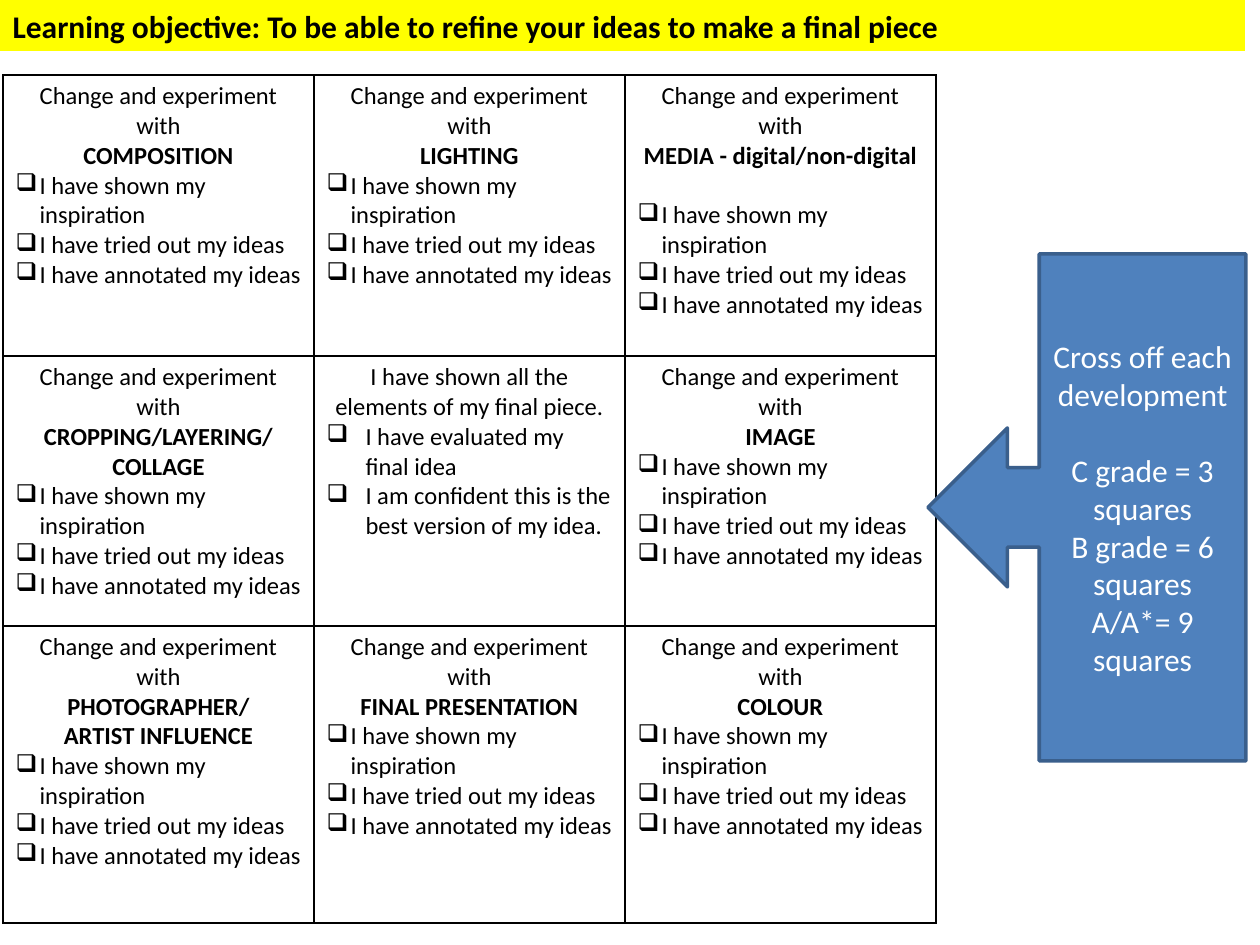
from pptx import Presentation, util as u
from pptx.dml.color import RGBColor
from pptx.enum import shapes, text
from pptx.oxml.ns import qn
from lxml import etree

PX = 914400 // 126
THEME = {
    "font": "Calibri", "ink": "000000", "light": "FFFFFF", "bar": "FFFF00",
    "call": "4F81BD", "edge": "3A5F8C", "cell": 14, "head": 18,
}
TITLE = "Learning objective: To be able to refine your ideas to make a final piece"
LEAD = "Change and experiment with"
CHECKS = ["I have shown my inspiration", "I have tried out my ideas",
          "I have annotated my ideas"]
FINAL = "I have shown all the elements of my final piece."
PROOFS = ["I have evaluated my final idea",
          "I am confident this is the best version of my idea."]
# Topic lines of each square; None marks the final-piece square.
TOPICS = [
    [["COMPOSITION"], ["LIGHTING"], ["MEDIA - digital/non-digital"]],
    [["CROPPING/LAYERING/ COLLAGE"], None, ["IMAGE"]],
    [["PHOTOGRAPHER/", "ARTIST INFLUENCE"], ["FINAL PRESENTATION"], ["COLOUR"]],
]
GAPS = {(0, 2): 17}  # points between topic and checklist
GRADES = ["Cross off each development", "C grade = 3 squares",
          "B grade = 6 squares", "A/A*= 9 squares"]
LEFT, TOP, COL = 3, 75, 311
ROWS = [281, 270, 297]


def px(n):
    return u.Emu(n * PX)


def rgb(key):
    return RGBColor.from_string(THEME[key])


def style(para, size, color, bold=False, align=text.PP_ALIGN.CENTER):
    para.alignment = align
    for run in para.runs:
        font = run.font
        font.name, font.size, font.bold = THEME["font"], u.Pt(THEME[size]), bold
        font.color.rgb = rgb(color)


def bullet(para, indent):
    props = para._p.get_or_add_pPr()
    props.set("marL", str(px(indent)))
    props.set("indent", str(-px(indent)))
    etree.SubElement(props, qn("a:buChar")).set("char", "❑")


def border(cell):
    props = cell._tc.get_or_add_tcPr()
    for side in ("lnL", "lnR", "lnT", "lnB"):
        line = etree.SubElement(props, qn("a:" + side), w=str(u.Pt(1)))
        fill = etree.SubElement(line, qn("a:solidFill"))
        etree.SubElement(fill, qn("a:srgbClr"), val=THEME["ink"])


def write(cell, topic, gap):
    if topic:
        heads, checks, indent = [LEAD] + topic, CHECKS, 24
    else:
        heads, checks, indent = [FINAL], PROOFS, 39
    frame = cell.text_frame
    frame.text = "\n".join(heads + checks)
    for i, para in enumerate(frame.paragraphs):
        if i < len(heads):
            style(para, "cell", "ink", bold=i > 0)
        else:
            bullet(para, indent)
            style(para, "cell", "ink", align=text.PP_ALIGN.LEFT)
        if gap and i == len(heads):
            para.space_before = u.Pt(gap)


def add_title(slide):
    bar = slide.shapes.title
    bar.left, bar.top, bar.width, bar.height = px(0), px(0), px(1245), px(51)
    bar.fill.solid()
    bar.fill.fore_color.rgb = rgb("bar")
    frame = bar.text_frame
    frame.text = TITLE
    frame.word_wrap = True
    frame.auto_size = text.MSO_AUTO_SIZE.NONE
    frame.vertical_anchor = text.MSO_ANCHOR.MIDDLE
    style(frame.paragraphs[0], "head", "ink", True, text.PP_ALIGN.LEFT)


def add_grid(slide):
    count = len(TOPICS[0])
    grid = slide.shapes.add_table(len(ROWS), count, px(LEFT), px(TOP),
                                  px(COL * count), px(sum(ROWS))).table
    grid.first_row = grid.horz_banding = False
    for col in grid.columns:
        col.width = px(COL)
    for r, tall in enumerate(ROWS):
        grid.rows[r].height = px(tall)
        for c, topic in enumerate(TOPICS[r]):
            cell = grid.cell(r, c)
            write(cell, topic, GAPS.get((r, c)))
            border(cell)
            cell.fill.background()


def add_call(slide):
    call = slide.shapes.add_shape(shapes.MSO_SHAPE.LEFT_ARROW_CALLOUT,
                                  px(928), px(254), px(318), px(507))
    call.shadow.inherit = False
    call.fill.solid()
    call.fill.fore_color.rgb = rgb("call")
    call.line.color.rgb = rgb("edge")
    call.line.width = u.Pt(2)
    frame = call.text_frame
    frame.text = "\n".join(GRADES)
    frame.word_wrap = True
    frame.vertical_anchor = text.MSO_ANCHOR.MIDDLE
    for para in frame.paragraphs:
        style(para, "head", "light")
    frame.paragraphs[0].space_after = u.Pt(22)


def main():
    deck = Presentation()
    deck.slide_width, deck.slide_height = px(1260), px(945)
    slide = deck.slides.add_slide(deck.slide_layouts[5])
    add_title(slide)
    add_grid(slide)
    add_call(slide)
    deck.save("out.pptx")


if __name__ == "__main__":
    main()
